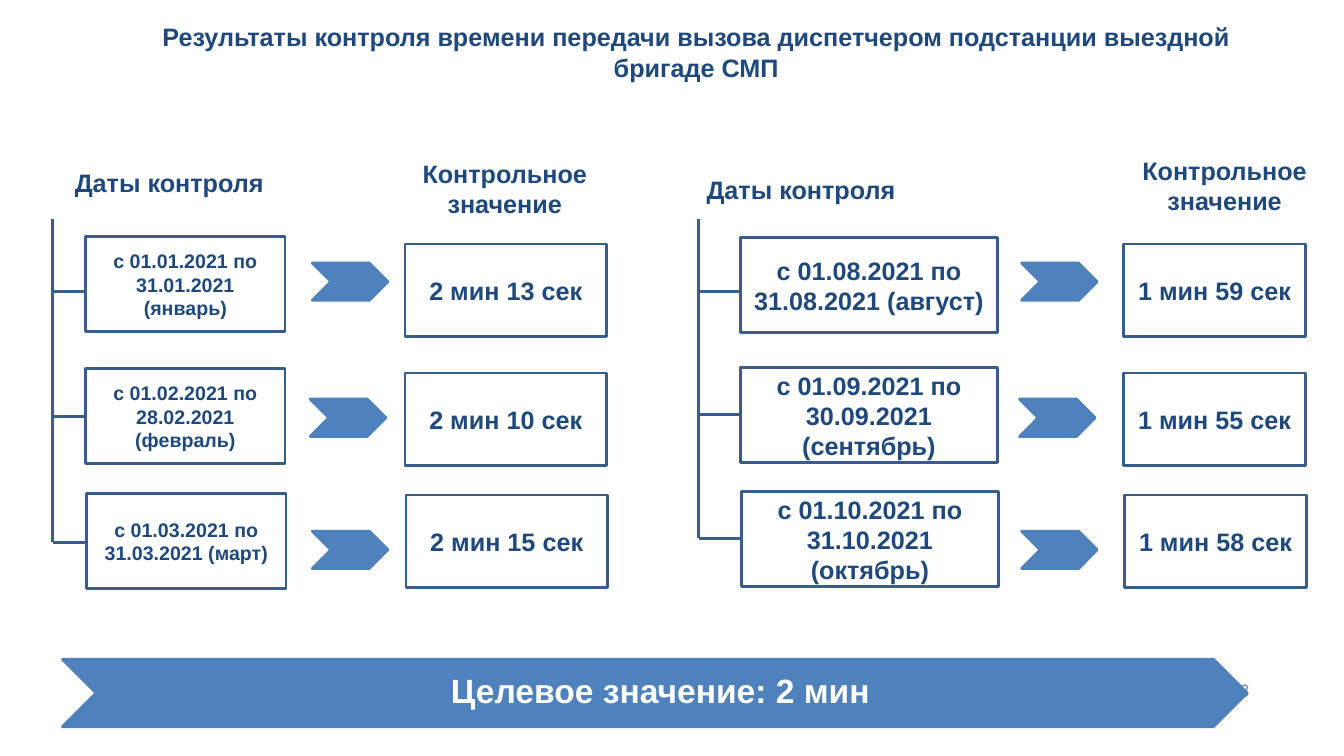
import pptx
import pptx.dml.color
import pptx.enum.shapes
import pptx.enum.text
import pptx.oxml.ns
import pptx.util
from lxml import etree

SHAPES = pptx.enum.shapes.MSO_SHAPE
ALIGN = pptx.enum.text.PP_ALIGN

# Positions are counted in columns and rows of a square grid
CELL = 0.1
COLUMNS, ROWS = 133.4, 75

NAVY = "1F497D"
OUTLINE = "385D8A"
BLUE = "4F81BD"
WHITE = "FFFFFF"
GREY = "8C8C8C"

# Top rows of the three control periods
VALUE_ROWS = (24.2, 37, 49.1)
ARROW_ROWS = (26.1, 39.6, 52.7)
ARROW_SHIFTS = (0, -0.2, 0)
BOX_SHIFTS = (0, 0, 0.1)


def cells(count):
    return pptx.util.Inches(count * CELL)


def color(hex_code):
    return pptx.dml.color.RGBColor.from_string(hex_code)


def write(shape, text, size=18, font="Arial", hex_code=NAVY, bold=True,
          align=ALIGN.CENTER, insets=(1, 0.5, 1, 0.5), spacing=None):
    frame = shape.text_frame
    frame.word_wrap = True
    frame.auto_size = pptx.enum.text.MSO_AUTO_SIZE.NONE
    frame.vertical_anchor = pptx.enum.text.MSO_ANCHOR.MIDDLE
    (frame.margin_left, frame.margin_top,
     frame.margin_right, frame.margin_bottom) = map(cells, insets)
    paragraph = frame.paragraphs[0]
    paragraph.alignment = align
    paragraph.line_spacing = spacing
    run = paragraph.add_run()
    run.text = text
    run.font.size = pptx.util.Pt(size)
    run.font.name = font
    run.font.bold = bold
    run.font.color.rgb = color(hex_code)


def add_label(slide, text, left, top, width, height, **text_format):
    label = slide.shapes.add_textbox(*map(cells, (left, top, width, height)))
    write(label, text, **text_format)


def add_figure(slide, preset, left, top, width, height, fill, line):
    figure = slide.shapes.add_shape(preset, *map(cells, (left, top, width, height)))
    figure.shadow.inherit = False
    figure.fill.solid()
    figure.fill.fore_color.rgb = color(fill)
    figure.line.color.rgb = color(line)
    figure.line.width = pptx.util.Pt(2)
    return figure


def add_box(slide, text, left, top, width, height, size=18):
    box = add_figure(slide, SHAPES.RECTANGLE, left, top, width, height, WHITE, OUTLINE)
    write(box, text, size=size)


def add_line(slide, start_x, start_y, end_x, end_y):
    line = slide.shapes.add_connector(
        pptx.enum.shapes.MSO_CONNECTOR.STRAIGHT,
        *map(cells, (start_x, start_y, end_x, end_y)))
    line.line.color.rgb = color(OUTLINE)
    line.line.width = pptx.util.Pt(2.25)
    etree.SubElement(line._element.spPr, pptx.oxml.ns.qn("a:effectLst"))


def add_dates(slide, periods, trunk, left, width, tops, branches, size):
    """Tree of control periods hanging from one vertical line."""
    add_line(slide, trunk, 21.75, trunk, branches[-1])
    for period, top, branch, shift in zip(periods, tops, branches, BOX_SHIFTS):
        add_line(slide, trunk, branch, left, branch)
        add_box(slide, period, left + shift, top, width, 9.4, size)


def add_values(slide, values, left, width, arrow_left):
    """Measured times, each with the arrow that leads to it."""
    rows = zip(values, VALUE_ROWS, ARROW_ROWS, BOX_SHIFTS, ARROW_SHIFTS)
    for value, top, arrow_top, box_shift, arrow_shift in rows:
        add_figure(slide, SHAPES.CHEVRON, arrow_left + arrow_shift, arrow_top,
                   7.5, 3.7, BLUE, BLUE)
        add_box(slide, value, left + box_shift, top, width, 9.2)


def main():
    presentation = pptx.Presentation()
    presentation.slide_width = cells(COLUMNS)
    presentation.slide_height = cells(ROWS)
    slide = presentation.slides.add_slide(presentation.slide_layouts[5])

    # Title
    title = slide.shapes.title
    title.left, title.top, title.width, title.height = map(
        cells, (11.5, 1.9, 115.2, 6.5))
    write(title, "Результаты контроля времени передачи вызова диспетчером "
                 "подстанции выездной бригаде СМП", insets=(1.2, 0.6, 1.2, 0.6))

    # Page number, partly under the target banner
    add_label(slide, "3", 94.1, 66.4, 31.1, 4, size=14, font="Calibri",
              hex_code=GREY, bold=False, align=ALIGN.RIGHT,
              insets=(1.2, 0.6, 1.2, 0.6))

    # Column headings
    add_label(slide, "Даты контроля", -0.9, 15, 35.4, 6.2)
    add_label(slide, "Контрольное значение", 38.5, 16.4, 23.2, 4.6)
    add_label(slide, "Даты контроля", 61.8, 15.7, 35.4, 6.2)
    add_label(slide, "Контрольное значение", 109.7, 16.1, 23.7, 4.6)

    # January to March
    add_dates(slide, ("с 01.01.2021 по 31.01.2021 (январь)",
                      "с 01.02.2021 по 28.02.2021 (февраль)",
                      "с 01.03.2021 по 31.03.2021 (март)"),
              trunk=5.25, left=8.5, width=19.8, tops=(23.5, 36.6, 49),
              branches=(28.9, 41.3, 53.8), size=14)
    add_values(slide, ("2 мин 13 сек", "2 мин 10 сек", "2 мин 15 сек"),
               left=40.2, width=20, arrow_left=31)

    # August to October
    add_dates(slide, ("с 01.08.2021 по 31.08.2021 (август)",
                      "с 01.09.2021 по 30.09.2021 (сентябрь)",
                      "с 01.10.2021 по 31.10.2021 (октябрь)"),
              trunk=69.35, left=73.5, width=25.5, tops=(23.6, 36.5, 48.8),
              branches=(28.9, 41.1, 53.4), size=18)
    add_values(slide, ("1 мин 59 сек", "1 мин 55 сек", "1 мин 58 сек"),
               left=111.5, width=18.1, arrow_left=101.4)

    # Target banner
    target = add_figure(slide, SHAPES.CHEVRON, 6.2, 65.4, 117.6, 6.7, BLUE, BLUE)
    write(target, "Целевое значение: 2 мин", size=24, hex_code=WHITE,
          insets=(1.7, 0.6, 0.6, 0.6), spacing=0.9)

    presentation.save("out.pptx")


if __name__ == "__main__":
    main()
